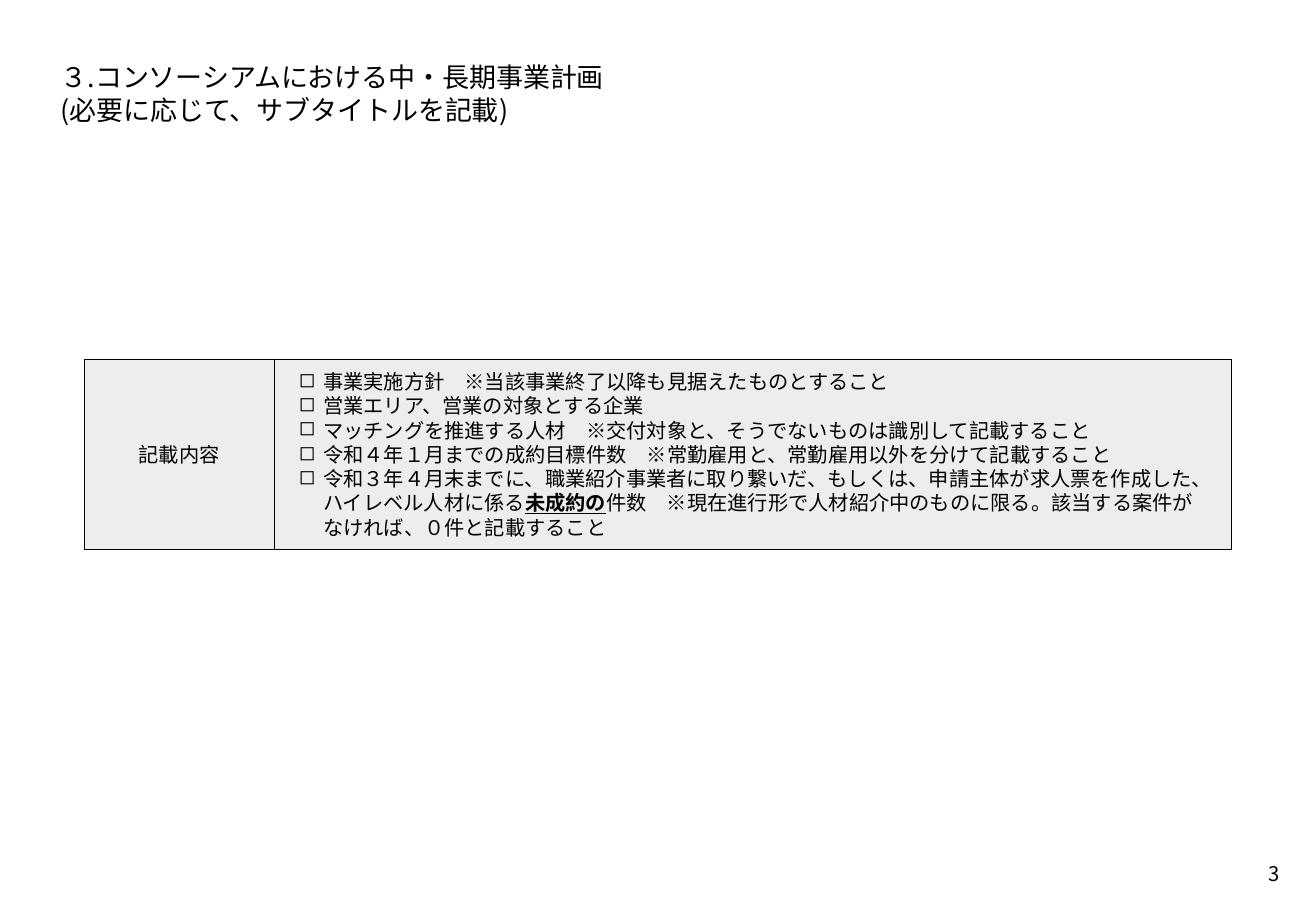
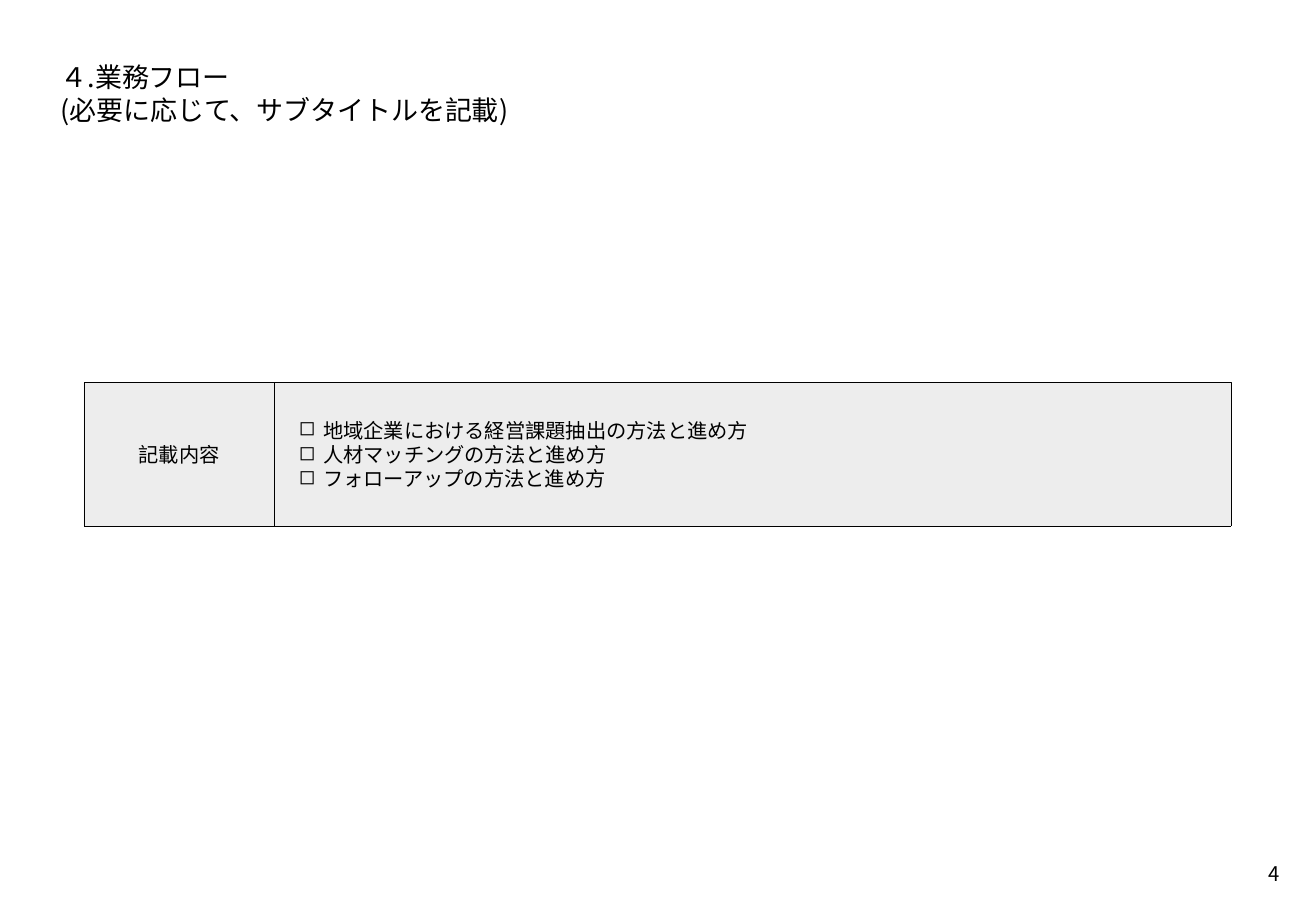
from pptx import Presentation
from pptx.dml.color import RGBColor
from pptx.enum.dml import MSO_LINE as Dash
from pptx.enum.shapes import MSO_SHAPE as Geom
from pptx.enum.text import MSO_ANCHOR as Anchor, PP_ALIGN as Align
from pptx.oxml.ns import qn
from pptx.util import Inches, Pt
from lxml.etree import SubElement

# Shared style
BLACK = RGBColor(0x00, 0x00, 0x00)
GRAY = RGBColor(0xED, 0xED, 0xED)
FONT = "Noto Sans CJK JP"
HEAD, BODY = 16, 12
LEAD = 1.2  # line pitch as a multiple of the text size
SUB = "(必要に応じて、サブタイトルを記載)"
LABEL = "記載内容"

# Panel grid, in inches
LEFT, MID, SIDE, MAIN = 0.69, 3.74, 1.57, 7.87

# Each item is a list of runs: (text, stressed)
PLAN = [
    [("事業実施方針　※当該事業終了以降も見据えたものとすること", False)],
    [("営業エリア、営業の対象とする企業", False)],
    [("マッチングを推進する人材　※交付対象と、そうでないものは識別して記載すること", False)],
    [("令和４年１月までの成約目標件数　※常勤雇用と、常勤雇用以外を分けて記載すること", False)],
    [("令和３年４月末までに、職業紹介事業者に取り繋いだ、もしくは、"
      "申請主体が求人票を作成した、ハイレベル人材に係る", False),
     ("未成約の", True),
     ("件数　※現在進行形で人材紹介中のものに限る。"
      "該当する案件がなければ、０件と記載すること", False)],
]
FLOW = [
    [("地域企業における経営課題抽出の方法と進め方", False)],
    [("人材マッチングの方法と進め方", False)],
    [("フォローアップの方法と進め方", False)],
]


def add_run(par, text, size, stress=False):
    run = par.add_run()
    run.text = text
    font = run.font
    font.name, font.size = FONT, Pt(size)
    font.bold = font.underline = stress
    font.color.rgb = BLACK
    SubElement(font._element, qn("a:ea")).set("typeface", FONT)


def set_frame(frame, inset, anchor=Anchor.TOP):
    frame.word_wrap = True
    frame.vertical_anchor = anchor
    frame.margin_left = frame.margin_right = Inches(inset)
    frame.margin_top = frame.margin_bottom = Inches(inset)


def set_par(par, size, align=Align.LEFT):
    par.alignment = align
    par.line_spacing = Pt(size * LEAD)


def set_bullet(par):
    props = par._p.get_or_add_pPr()
    props.set("marL", str(Inches(0.2)))
    props.set("indent", str(Inches(-0.2)))
    SubElement(props, qn("a:buChar")).set("char", "◻")


def add_text(slide, box, lines, size, inset, align=Align.LEFT):
    frame = slide.shapes.add_textbox(*map(Inches, box)).text_frame
    set_frame(frame, inset)
    par = frame.paragraphs[0]
    set_par(par, size, align)
    for i, line in enumerate(lines):
        if i:
            par.add_line_break()
        add_run(par, line, size)


def add_box(group, left, width, high, inset):
    box = group.shapes.add_shape(
        Geom.RECTANGLE, *map(Inches, (left, MID - high / 2, width, high)))
    box.shadow.inherit = False
    box.fill.solid()
    box.fill.fore_color.rgb = GRAY
    box.line.color.rgb = BLACK
    box.line.width = Pt(0.25)
    box.line.dash_style = Dash.ROUND_DOT
    set_frame(box.text_frame, inset, Anchor.MIDDLE)
    return box.text_frame


def add_panel(slide, high, items):
    group = slide.shapes.add_group_shape()
    # Bulleted list
    frame = add_box(group, LEFT + SIDE, MAIN, high, 0.2)
    for i, runs in enumerate(items):
        par = frame.add_paragraph() if i else frame.paragraphs[0]
        set_par(par, BODY)
        set_bullet(par)
        for text, stress in runs:
            add_run(par, text, BODY, stress)
    # Label
    par = add_box(group, LEFT, SIDE, high, 0.1).paragraphs[0]
    set_par(par, BODY, Align.CENTER)
    add_run(par, LABEL, BODY)


def add_page(deck, num, title, high, items):
    slide = deck.slides.add_slide(deck.slide_layouts[6])
    add_text(slide, (0.3, 0.3, 10.24, 0.79), [title, SUB], HEAD, 0.2)
    add_text(slide, (10.24, 6.99, 0.39, 0.39), [str(num)], BODY, 0.1, Align.RIGHT)
    add_panel(slide, high, items)


def main():
    deck = Presentation()
    deck.slide_width, deck.slide_height = Inches(10.83), Inches(7.5)
    add_page(deck, 3, "３.コンソーシアムにおける中・長期事業計画", 1.57, PLAN)
    add_page(deck, 4, "４.業務フロー", 1.18, FLOW)
    deck.save("out.pptx")


if __name__ == "__main__":
    main()
